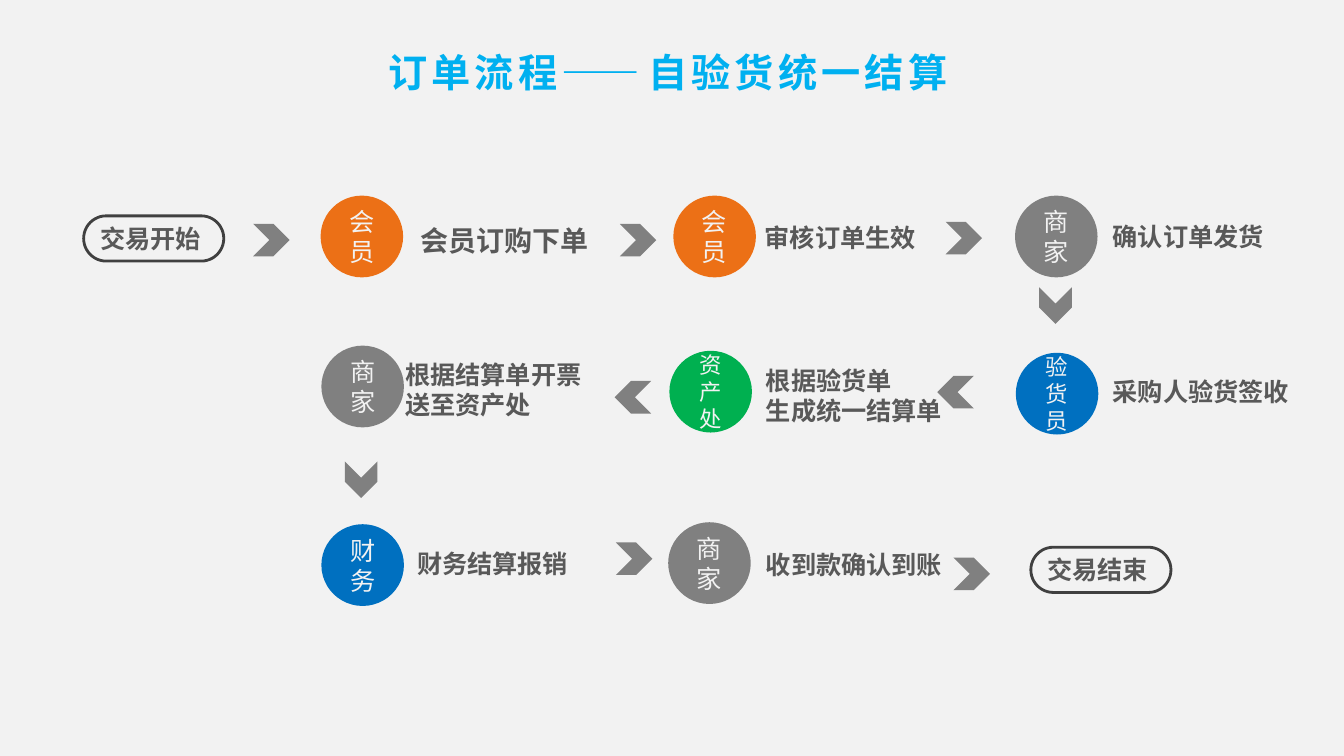
from pptx import Presentation
from pptx.dml.color import RGBColor
from pptx.enum.lang import MSO_LANGUAGE_ID as LANG
from pptx.enum.shapes import MSO_SHAPE as SHAPE
from pptx.enum.text import MSO_ANCHOR as ANCHOR, MSO_AUTO_SIZE as FIT, PP_ALIGN as ALIGN
from pptx.oxml.ns import qn
from pptx.util import Cm, Pt
from lxml import etree

COLORS = {"bg": "F2F2F2", "title": "00B0F0", "text": "595959", "border": "404040",
          "gray": "808080", "orange": "EC7016", "green": "00B050", "blue": "0070C0"}
CJK = "Noto Sans CJK SC"


def write(sp, text, size=18, font="Open Sans", color="text", bold=True,
          align=ALIGN.LEFT, anchor=ANCHOR.TOP, spacing=0):
    tf = sp.text_frame
    tf.word_wrap = True
    tf.auto_size = FIT.NONE
    tf.vertical_anchor = anchor
    for i, line in enumerate(text.split("\n")):
        p = tf.add_paragraph() if i else tf.paragraphs[0]
        p.alignment = align
        r = p.add_run()
        r.text = line
        f = r.font
        f.name, f.size, f.bold = font, Pt(size), bold
        f.color.rgb = RGBColor.from_string(COLORS[color])
        f.language_id = LANG.SIMPLIFIED_CHINESE
        rPr = r._r.get_or_add_rPr()
        rPr.set("spc", str(spacing * 100))
        etree.SubElement(rPr, qn("a:ea")).set("typeface", CJK)


def add_filled(kind, x, y, w, h, fill, line=None):
    sp = s.shapes.add_shape(kind, Cm(x), Cm(y), Cm(w), Cm(h))
    sp.shadow.inherit = False
    sp.fill.solid()
    sp.fill.fore_color.rgb = RGBColor.from_string(COLORS[fill])
    if line:
        sp.line.color.rgb = RGBColor.from_string(COLORS[line])
        sp.line.width = Pt(2)
    else:
        sp.line.fill.background()
    return sp


prs = Presentation()
prs.slide_width, prs.slide_height = Cm(33.87), Cm(19.05)
s = prs.slides.add_slide(prs.slide_layouts[5])
s.background.fill.solid()
s.background.fill.fore_color.rgb = RGBColor.from_string(COLORS["bg"])

title = s.shapes.title
title.left, title.top, title.width, title.height = Cm(9.53), Cm(1.09), Cm(16.46), Cm(1.45)
write(title, "订单流程——自验货统一结算", size=28, font=CJK, color="title", spacing=3)

steps = [
    ("会员", "orange", 8.08, 4.93, "会员订购下单", 10.34, 5.51, 20),
    ("会员", "orange", 16.97, 4.93, "审核订单生效", 19.02, 5.49, 18),
    ("商家", "gray", 25.58, 4.93, "确认订单发货", 27.79, 5.46, 18),
    ("验货员", "blue", 25.6, 8.89, "采购人验货签收", 27.79, 9.37, 18),
    ("资产处", "green", 16.87, 8.84, "根据验货单\n生成统一结算单", 19.05, 9.07, 18),
    ("商家", "gray", 8.1, 8.71, "根据结算单开票\n送至资产处", 9.96, 8.92, 18),
    ("财务", "blue", 8.1, 13.21, "财务结算报销", 10.26, 13.69, 18),
    ("商家", "gray", 16.84, 13.16, "收到款确认到账", 19.05, 13.72, 18),
]
for role, fill, x, y, action, label_x, label_y, size in steps:
    circle = add_filled(SHAPE.OVAL, x, y, 2.08, 2.06, fill)
    write(circle, role, size=16 if len(role) == 3 else 18, font="Calibri", color="bg",
          bold=False, align=ALIGN.CENTER, anchor=ANCHOR.MIDDLE)
    height = 1.8 if "\n" in action else 1.02
    label = s.shapes.add_textbox(Cm(label_x), Cm(label_y), Cm(6.71), Cm(height))
    write(label, action, size=size)

for text, x, y in [("交易开始", 2.11, 5.44), ("交易结束", 25.98, 13.79)]:
    terminator = add_filled(SHAPE.FLOWCHART_TERMINATOR, x, y, 3.53, 1.14, "bg", "border")
    write(terminator, text, anchor=ANCHOR.MIDDLE)

chevrons = [
    (6.38, 5.64, 0), (15.62, 5.64, 0), (23.83, 5.59, 0),
    (26.14, 7.29, 90), (23.62, 9.47, 180), (15.49, 9.6, 180),
    (8.64, 11.68, 90), (15.52, 13.67, 0), (24.03, 14.05, 0),
]
for x, y, angle in chevrons:
    add_filled(SHAPE.CHEVRON, x, y, 0.92, 0.82, "gray").rotation = angle

prs.save("out.pptx")
